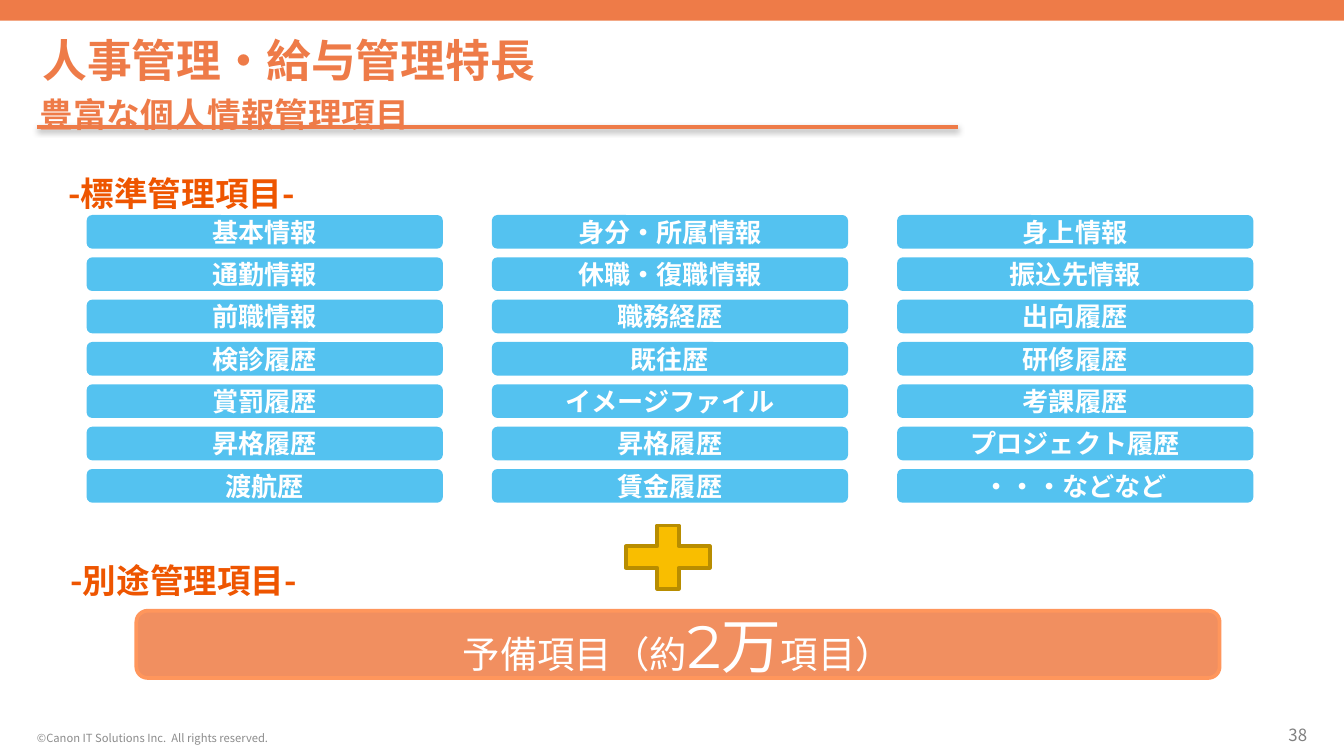
from dataclasses import dataclass
from typing import Optional

import lxml.etree
import pptx
import pptx.dml.color
import pptx.enum.shapes
import pptx.enum.text
import pptx.oxml
import pptx.oxml.ns
import pptx.util

EMU_PER_PX = 4572  # 200 px to the inch
FONT = "Noto Sans CJK JP"
ORANGE, HEADING, BLUE, WHITE = "EE7B48", "EE5500", "54C2F0", "FFFFFF"
SHAPES = pptx.enum.shapes.MSO_SHAPE
ALIGN = pptx.enum.text.PP_ALIGN
ANCHOR = pptx.enum.text.MSO_ANCHOR


@dataclass(frozen=True)
class Box:
    left: int
    top: int
    width: int
    height: int

    def emu(self) -> list:
        return [px(n) for n in (self.left, self.top, self.width, self.height)]


@dataclass(frozen=True)
class Label:
    text: str
    box: Box
    size: int
    color: str
    bold: bool = True
    inset: Optional[int] = None
    anchor: ANCHOR = ANCHOR.TOP
    align: ALIGN = ALIGN.LEFT


def px(length: int) -> pptx.util.Emu:
    return pptx.util.Emu(length * EMU_PER_PX)


def rgb(color: str) -> pptx.dml.color.RGBColor:
    return pptx.dml.color.RGBColor.from_string(color)


def add_run(paragraph, text: str, *, size: int, color: str, bold: bool = False, font: str = FONT) -> None:
    run = paragraph.add_run()
    run.text = text
    run.font.size = pptx.util.Pt(size)
    run.font.bold = bold
    run.font.color.rgb = rgb(color)
    run.font.name = font
    east_asian = lxml.etree.SubElement(run.font._element, pptx.oxml.ns.qn("a:ea"))
    east_asian.set("typeface", font)


def add_label(slide, label: Label) -> None:
    frame = slide.shapes.add_textbox(*label.box.emu()).text_frame
    frame.word_wrap = True
    frame.vertical_anchor = label.anchor
    if label.inset is not None:
        frame.margin_left = frame.margin_right = px(label.inset)
        frame.margin_top = frame.margin_bottom = px(label.inset)
    paragraph = frame.paragraphs[0]
    paragraph.alignment = label.align
    add_run(paragraph, label.text, size=label.size, color=label.color, bold=label.bold)


def add_block(slide, kind: SHAPES, box: Box, fill: str, line: Optional[str] = None):
    shape = slide.shapes.add_shape(kind, *box.emu())
    shape.shadow.inherit = False
    shape.fill.solid()
    shape.fill.fore_color.rgb = rgb(fill)
    if line:
        shape.line.color.rgb = rgb(line)
        shape.line.width = pptx.util.Pt(2)
    else:
        shape.line.fill.background()
    return shape


def centered_paragraph(shape):
    frame = shape.text_frame
    frame.word_wrap = False
    frame.vertical_anchor = ANCHOR.MIDDLE
    frame.paragraphs[0].alignment = ALIGN.CENTER
    return frame.paragraphs[0]


def add_title_rule(slide) -> None:
    rule = slide.shapes.add_connector(
        pptx.enum.shapes.MSO_CONNECTOR.STRAIGHT, px(55), px(189), px(1426), px(189))
    rule.line.color.rgb = rgb(ORANGE)
    rule.line.width = pptx.util.Pt(2)
    blur, distance = pptx.util.Pt(3.1), pptx.util.Pt(1.6)
    rule._element.spPr.append(pptx.oxml.parse_xml(
        f'<a:effectLst {pptx.oxml.ns.nsdecls("a")}>'
        f'<a:outerShdw blurRad="{blur}" dist="{distance}" dir="5400000" rotWithShape="0">'
        '<a:srgbClr val="000000"><a:alpha val="38000"/></a:srgbClr>'
        '</a:outerShdw></a:effectLst>'))


LABELS = [
    Label("38", Box(1867, 1079, 78, 30), 9, "808080", bold=False, inset=0,
          anchor=ANCHOR.BOTTOM, align=ALIGN.RIGHT),
    Label("©Canon IT Solutions Inc.  All rights reserved.", Box(55, 1078, 472, 30), 6,
          "8C8C8C", bold=False, inset=0, anchor=ANCHOR.BOTTOM),
    Label("豊富な個人情報管理項目", Box(39, 130, 1338, 68), 18, ORANGE),
    Label("人事管理・給与管理特長", Box(63, 48, 1574, 78), 24, ORANGE, inset=0),
    Label("-標準管理項目-", Box(82, 248, 670, 80), 18, HEADING),
    Label("-別途管理項目-", Box(85, 824, 670, 80), 18, HEADING),
]

ITEM_ROWS = [
    ("基本情報", "身分・所属情報", "身上情報"),
    ("通勤情報", "休職・復職情報", "振込先情報"),
    ("前職情報", "職務経歴", "出向履歴"),
    ("検診履歴", "既往歴", "研修履歴"),
    ("賞罰履歴", "イメージファイル", "考課履歴"),
    ("昇格履歴", "昇格履歴", "プロジェクト履歴"),
    ("渡航歴", "賃金履歴", "・・・などなど"),
]


def main() -> None:
    presentation = pptx.Presentation()
    presentation.slide_width, presentation.slide_height = px(2000), px(1125)
    slide = presentation.slides.add_slide(presentation.slide_layouts[6])

    # Top band, title rule and all plain text
    add_block(slide, SHAPES.RECTANGLE, Box(0, 0, 2000, 31), ORANGE)
    add_title_rule(slide)
    for label in LABELS:
        add_label(slide, label)

    # Grid of standard items
    for row, items in enumerate(ITEM_ROWS):
        for column, item in enumerate(items):
            box = Box(129 + column * 603, 320 + row * 63, 530, 50)
            button = add_block(slide, SHAPES.ROUNDED_RECTANGLE, box, BLUE)
            add_run(centered_paragraph(button), item, size=14, color=WHITE, bold=True)

    # Plus sign and spare items
    plus = add_block(slide, SHAPES.MATH_PLUS, Box(909, 765, 170, 128), "F9BE00", "B88D00")
    plus.adjustments[0] = 0.25
    spare = add_block(slide, SHAPES.ROUNDED_RECTANGLE, Box(203, 909, 1612, 100), "F18F60", "FF965C")
    paragraph = centered_paragraph(spare)
    for text, size in (("予備項目（約", 20), ("2万", 32), ("項目）", 20)):
        add_run(paragraph, text, size=size, color=WHITE, font="Montserrat")

    presentation.save("out.pptx")


if __name__ == "__main__":
    main()
